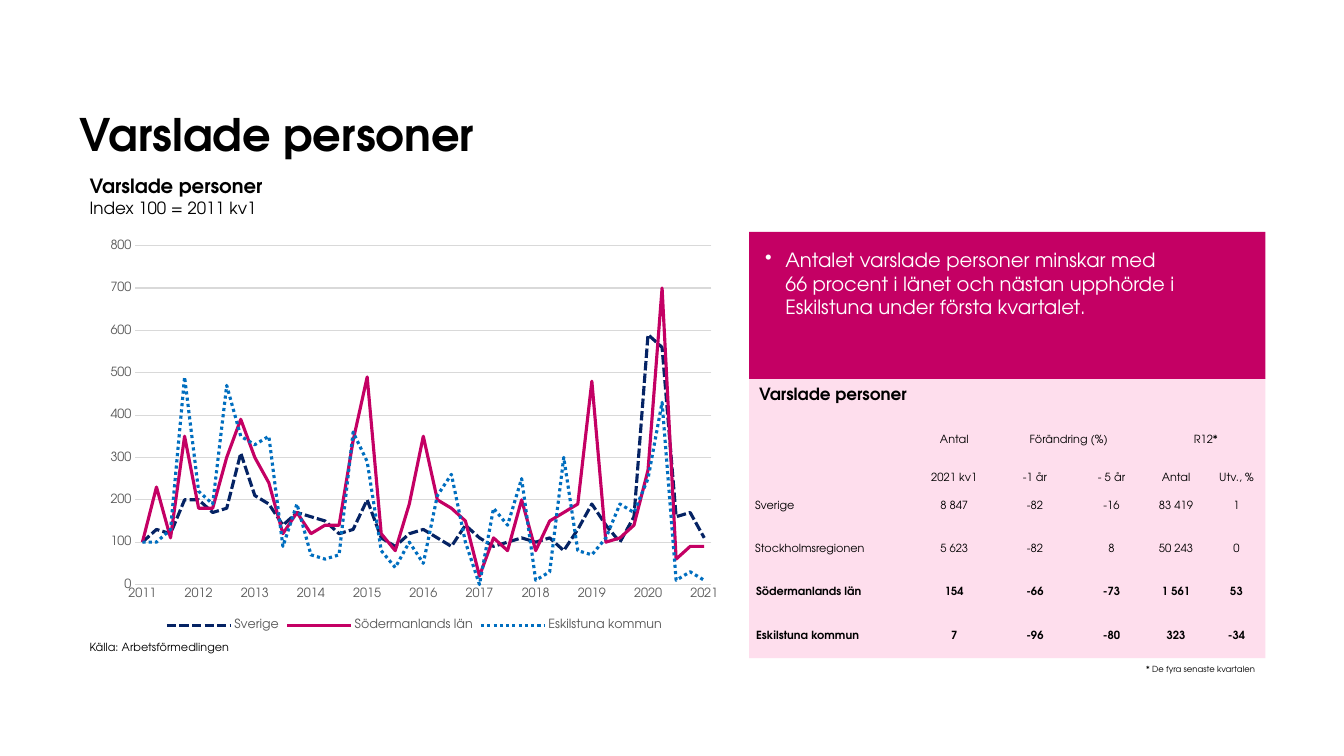
from lxml import etree
from pptx import Presentation
from pptx.chart.data import CategoryChartData
from pptx.dml.color import RGBColor
from pptx.enum.chart import XL_CHART_TYPE, XL_LEGEND_POSITION, XL_TICK_MARK
from pptx.enum.dml import MSO_LINE
from pptx.enum.shapes import MSO_SHAPE
from pptx.enum.text import MSO_ANCHOR, PP_ALIGN
from pptx.oxml.ns import qn
from pptx.util import Inches, Pt

LINE_CHART = XL_CHART_TYPE.LINE
LEGEND_BOTTOM = XL_LEGEND_POSITION.BOTTOM
NO_TICK = XL_TICK_MARK.NONE
DASHED, DOTTED, SOLID = MSO_LINE.SQUARE_DOT, MSO_LINE.ROUND_DOT, MSO_LINE.SOLID
RECTANGLE = MSO_SHAPE.RECTANGLE
TOP, MIDDLE, BOTTOM = MSO_ANCHOR.TOP, MSO_ANCHOR.MIDDLE, MSO_ANCHOR.BOTTOM
LEFT, CENTER = PP_ALIGN.LEFT, PP_ALIGN.CENTER

FONT = "TeX Gyre Adventor"
BLACK = RGBColor(0x00, 0x00, 0x00)
WHITE = RGBColor(0xFF, 0xFF, 0xFF)
MAGENTA = RGBColor(0xC4, 0x00, 0x64)
PINK = RGBColor(0xFE, 0xDE, 0xED)
NAVY = RGBColor(0x05, 0x23, 0x64)
BLUE = RGBColor(0x00, 0x6E, 0xBF)
GRAY = RGBColor(0x59, 0x59, 0x59)
GRID = RGBColor(0xD9, 0xD9, 0xD9)
NO_STYLE = "{2D5ABB26-0587-4C30-8999-92F81FD0307C}"

YEARS = range(2011, 2022)
SERIES = [
    ("Sverige", NAVY, DASHED,
     [100, 130, 120, 200, 200, 170, 180, 310, 210, 190, 140, 170, 160, 150,
      120, 130, 200, 110, 90, 120, 130, 110, 90, 140, 110, 90, 100, 110,
      100, 110, 80, 130, 190, 140, 100, 160, 590, 560, 160, 170, 110]),
    ("Södermanlands län", MAGENTA, SOLID,
     [100, 230, 110, 350, 180, 180, 300, 390, 300, 240, 120, 170, 120, 140,
      140, 340, 490, 120, 80, 190, 350, 200, 180, 150, 20, 110, 80, 200,
      80, 150, 170, 190, 480, 100, 110, 140, 270, 700, 60, 90, 90]),
    ("Eskilstuna kommun", BLUE, DOTTED,
     [100, 100, 130, 490, 220, 190, 470, 350, 330, 350, 90, 190, 70, 60,
      70, 360, 290, 80, 40, 100, 50, 210, 260, 100, 0, 180, 140, 250,
      10, 30, 300, 80, 70, 110, 190, 170, 250, 430, 10, 30, 10]),
]

COLUMN_WIDTHS = [1.68, 0.75, 0.85, 0.67, 0.61, 0.59]
ROW_HEIGHTS = [0.36, 0.38] + [0.43] * 4
HEADER_ROWS = 2
FIRST_BOLD_ROW = 4
TABLE_ROWS = [
    ["", "Antal", "Förändring (%)", "", "R12*", ""],
    ["", "2021 kv1", "-1 år", "- 5 år", "Antal", "Utv., %"],
    ["Sverige", "8 847", "-82", "-16", "83 419", "1"],
    ["Stockholmsregionen", "5 623", "-82", "8", "50 243", "0"],
    ["Södermanlands län", "154", "-66", "-73", "1 561", "53"],
    ["Eskilstuna kommun", "7", "-96", "-80", "323", "-34"],
]


def style_font(font, size, color=BLACK, bold=False):
    """Apply the slide's typeface with a size, colour and weight."""
    font.name = FONT
    font.size = Pt(size)
    font.bold = bold
    font.color.rgb = color


def add_label(slide, box, lines, anchor=TOP, margins=(0.1, 0.05), wrap=False):
    """Add a text box with one paragraph per (text, size, bold) line."""
    text_frame = slide.shapes.add_textbox(*map(Inches, box)).text_frame
    text_frame.word_wrap = wrap
    text_frame.vertical_anchor = anchor
    text_frame.margin_left = text_frame.margin_right = Inches(margins[0])
    text_frame.margin_top = text_frame.margin_bottom = Inches(margins[1])
    text_frame.text = "\n".join(text for text, _, _ in lines)
    for paragraph, (_, size, bold) in zip(text_frame.paragraphs, lines):
        for run in paragraph.runs:
            style_font(run.font, size, bold=bold)


def add_panel(slide, box, color):
    """Add a plain filled rectangle."""
    panel = slide.shapes.add_shape(RECTANGLE, *map(Inches, box))
    panel.shadow.inherit = False
    panel.fill.solid()
    panel.fill.fore_color.rgb = color
    panel.line.fill.background()
    return panel


def add_message(slide, box):
    """Add the magenta panel with its bulleted conclusion."""
    text_frame = add_panel(slide, box, MAGENTA).text_frame
    text_frame.word_wrap = True
    text_frame.vertical_anchor = TOP
    text_frame.margin_left = text_frame.margin_right = Inches(0.16)
    text_frame.margin_top = text_frame.margin_bottom = Inches(0.16)
    text_frame.text = ("Antalet varslade personer minskar med\v66 procent i länet och "
                       "nästan upphörde i Eskilstuna under första kvartalet.")
    paragraph = text_frame.paragraphs[0]
    paragraph.alignment = LEFT
    properties = paragraph._p.get_or_add_pPr()
    properties.set("marL", str(Inches(0.2)))
    properties.set("indent", str(Inches(-0.2)))
    etree.SubElement(properties, qn("a:buChar")).set("char", "•")
    for run in paragraph.runs:
        style_font(run.font, 14, WHITE)


def add_index_chart(slide, box):
    """Add the line chart of quarterly index values."""
    chart_data = CategoryChartData(number_format="#,##0")
    quarters = [label for year in YEARS for label in (str(year), "", "", "")]
    chart_data.categories = quarters[:len(SERIES[0][3])]
    for name, _, _, values in SERIES:
        chart_data.add_series(name, values)
    chart = slide.shapes.add_chart(LINE_CHART, *map(Inches, box), chart_data).chart
    style_font(chart.font, 10)
    chart.has_title = False
    chart.has_legend = True
    chart.legend.position = LEGEND_BOTTOM
    chart.legend.include_in_layout = False
    style_font(chart.legend.font, 9, GRAY)
    chart.plots[0].vary_by_categories = False
    for series, (_, color, dash, _) in zip(chart.plots[0].series, SERIES):
        series.smooth = False
        series.format.line.width = Pt(2.25)
        series.format.line.color.rgb = color
        series.format.line.dash_style = dash
    for axis in (chart.category_axis, chart.value_axis):
        axis.major_tick_mark = axis.minor_tick_mark = NO_TICK
        style_font(axis.tick_labels.font, 9, GRAY)
    category_axis, value_axis = chart.category_axis, chart.value_axis
    category_axis._element.find(".//" + qn("a:bodyPr")).set("rot", "-60000000")
    value_axis.minimum_scale, value_axis.maximum_scale = 0, 800
    value_axis.major_unit = 100
    value_axis.format.line.fill.background()
    for line in (category_axis.format.line, value_axis.major_gridlines.format.line):
        line.color.rgb = GRID
        line.width = Pt(0.75)


def fill_cell(cell, text, row, column):
    """Write one table cell according to its row and column."""
    cell.fill.background()
    cell.margin_left = cell.margin_right = cell.margin_top = Inches(0.01)
    cell.margin_bottom = 0
    cell.vertical_anchor = BOTTOM if row < HEADER_ROWS else MIDDLE
    if column == 0:
        cell.margin_left = Inches(0.08 if row < FIRST_BOLD_ROW else 0.09)
    cell.text_frame.text = text
    paragraph = cell.text_frame.paragraphs[0]
    paragraph.alignment = CENTER if column else LEFT
    for run in paragraph.runs:
        style_font(run.font, 8, bold=row >= FIRST_BOLD_ROW)


def add_region_table(slide, box):
    """Add the table of notices by region."""
    table = slide.shapes.add_table(
        len(ROW_HEIGHTS), len(COLUMN_WIDTHS), *map(Inches, box)).table
    table.first_row = table.horz_banding = False
    table._tbl.tblPr.find(qn("a:tableStyleId")).text = NO_STYLE
    for column, width in zip(table.columns, COLUMN_WIDTHS):
        column.width = Inches(width)
    for row, height in zip(table.rows, ROW_HEIGHTS):
        row.height = Inches(height)
    for row, texts in enumerate(TABLE_ROWS):
        for column, text in enumerate(texts):
            fill_cell(table.cell(row, column), text, row, column)
    for column in (2, 4):
        table.cell(0, column).merge(table.cell(0, column + 1))


def add_chart_region(slide, left, top):
    """Add the chart with its heading and source line."""
    add_label(slide, (left, top, 1.94, 0.54),
              [("Varslade personer", 14, True), ("Index 100 = 2011 kv1", 12, False)])
    add_index_chart(slide, (left + 0.18, top + 0.62, 6.28, 4))
    add_label(slide, (left, top + 4.62, 1.64, 0.24),
              [("Källa: Arbetsförmedlingen", 8, False)])


def add_table_region(slide, left, top):
    """Add the conclusion above the table panel and its footnote."""
    add_panel(slide, (left, top + 1.45, 5.12, 2.78), PINK)
    add_message(slide, (left, top, 5.12, 1.46))
    add_label(slide, (left, top + 1.46, 1.69, 0.3), [("Varslade personer", 12, True)])
    add_region_table(slide, (left - 0.02, top + 1.76, 5.15, 2.46))
    add_label(slide, (left + 3.84, top + 4.24, 1.29, 0.2),
              [("* De fyra senaste kvartalen", 6, False)])


def main():
    """Build the slide and save the presentation."""
    presentation = Presentation()
    presentation.slide_width, presentation.slide_height = Inches(13.33), Inches(7.5)
    slide = presentation.slides.add_slide(presentation.slide_layouts[6])
    add_label(slide, (0.79, 0.37, 9.22, 1.22), [("Varslade personer", 32, True)],
              anchor=BOTTOM, margins=(0, 0), wrap=True)
    add_chart_region(slide, 0.79, 1.68)
    add_table_region(slide, 7.43, 2.3)
    presentation.save("out.pptx")


if __name__ == "__main__":
    main()
